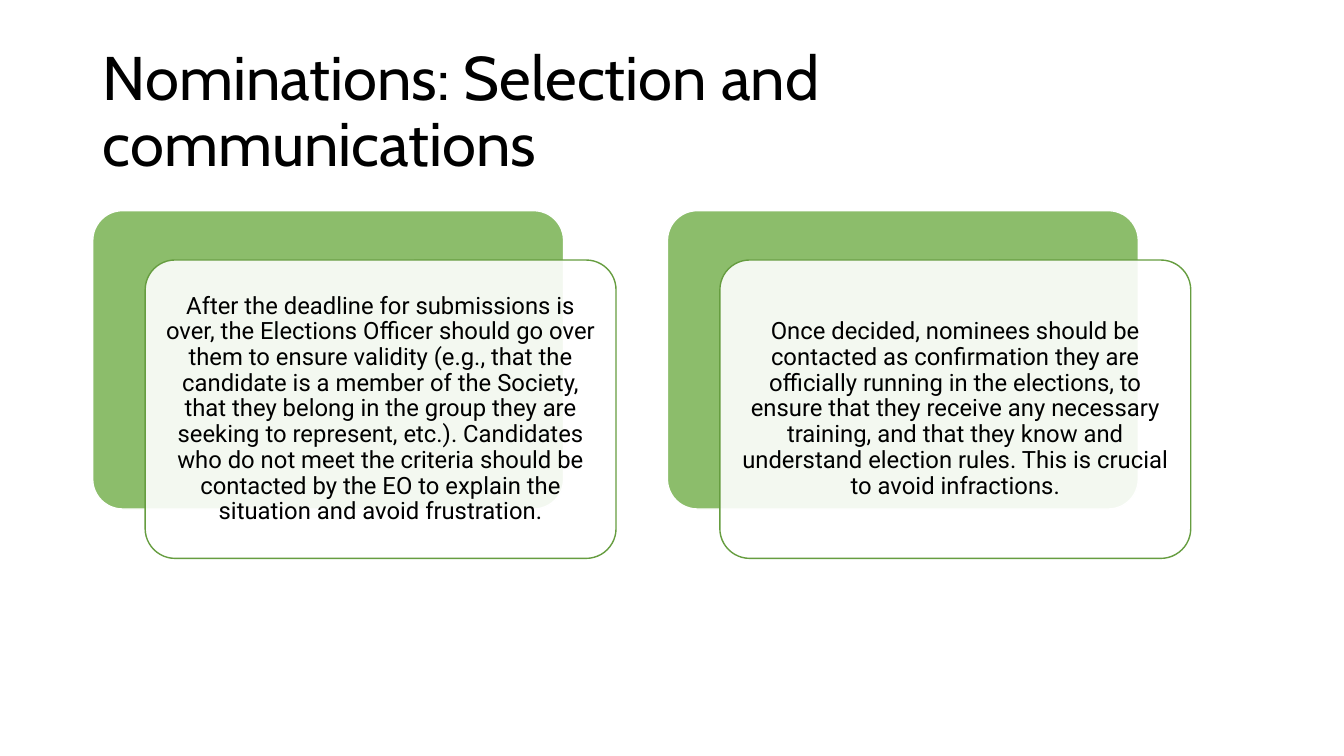
from pptx import Presentation
from pptx.dml.color import RGBColor
from pptx.enum.shapes import MSO_SHAPE
from pptx.enum.text import MSO_ANCHOR, PP_ALIGN
from pptx.oxml.ns import qn
from pptx.util import Inches, Pt
from lxml import etree

# Content
TITLE = "Nominations: Selection and communications"
CARDS = [
    "After the deadline for submissions is over, the Elections Officer should go over them "
    "to ensure validity (e.g., that the candidate is a member of the Society, that they "
    "belong in the group they are seeking to represent, etc.). Candidates who do not meet "
    "the criteria should be contacted by the EO to explain the situation and avoid frustration.",
    "Once decided, nominees should be contacted as confirmation they are officially running "
    "in the elections, to ensure that they receive any necessary training, and that they know "
    "and understand election rules. This is crucial to avoid infractions.",
]
COLORS = {"green": "70AD47", "outline": "669D40", "white": "FFFFFF", "text": "000000"}

# Layout in inches
CARD_LEFT, CARD_TOP, CARD_STEP = 0.92, 2.09, 5.7
CARD_WIDTH, CARD_HEIGHT = 4.67, 2.96
OFFSET_X, OFFSET_Y = 0.52, 0.49
TEXT_MARGIN = 0.085


def add_panel(slide, left, top, fill, opacity, line):
    shape = slide.shapes.add_shape(
        MSO_SHAPE.ROUNDED_RECTANGLE, Inches(left), Inches(top),
        Inches(CARD_WIDTH), Inches(CARD_HEIGHT))
    shape.adjustments[0] = 0.1
    shape.shadow.inherit = False
    shape.fill.solid()
    shape.fill.fore_color.rgb = RGBColor.from_string(COLORS[fill])
    color = shape.fill._xPr.find(qn("a:solidFill"))[0]
    etree.SubElement(color, qn("a:alpha")).set("val", str(opacity * 1000))
    shape.line.color.rgb = RGBColor.from_string(COLORS[line])
    shape.line.width = Pt(1)


def add_text(slide, text, left, top, width, height, font, size, align, inset_x, inset_y):
    box = slide.shapes.add_textbox(Inches(left), Inches(top), Inches(width), Inches(height))
    frame = box.text_frame
    frame.word_wrap = True
    frame.vertical_anchor = MSO_ANCHOR.MIDDLE
    frame.margin_left = frame.margin_right = Inches(inset_x)
    frame.margin_top = frame.margin_bottom = Inches(inset_y)
    paragraph = frame.paragraphs[0]
    paragraph.text = text
    paragraph.alignment = align
    paragraph.line_spacing = 0.9
    paragraph.font.name = font
    paragraph.font.size = Pt(size)
    paragraph.font.color.rgb = RGBColor.from_string(COLORS["text"])


presentation = Presentation()
presentation.slide_width, presentation.slide_height = Inches(13.33), Inches(7.5)
slide = presentation.slides.add_slide(presentation.slide_layouts[6])

# Title
add_text(slide, TITLE, 0.92, 0.4, 10.9, 1.45, "Cabin", 44, PP_ALIGN.LEFT, 0.1, 0.05)

# Cards: green panel behind, translucent white panel and its text in front
for index, text in enumerate(CARDS):
    left = CARD_LEFT + index * CARD_STEP
    front_left, front_top = left + OFFSET_X, CARD_TOP + OFFSET_Y
    add_panel(slide, left, CARD_TOP, "green", 80, "white")
    add_panel(slide, front_left, front_top, "white", 90, "outline")
    add_text(slide, text, front_left + TEXT_MARGIN, front_top + TEXT_MARGIN,
             CARD_WIDTH - 2 * TEXT_MARGIN, CARD_HEIGHT - 2 * TEXT_MARGIN,
             "Roboto", 17, PP_ALIGN.CENTER, 0.07, 0.07)

presentation.save("out.pptx")
